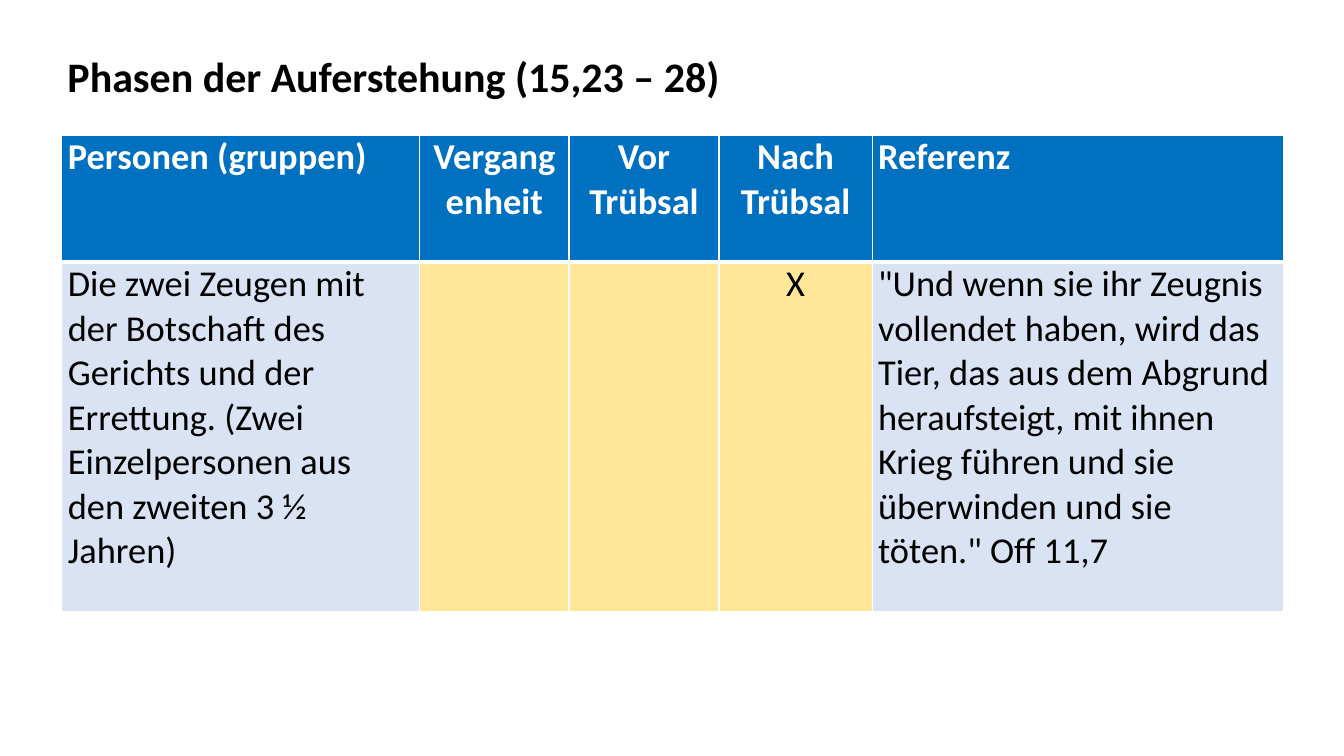
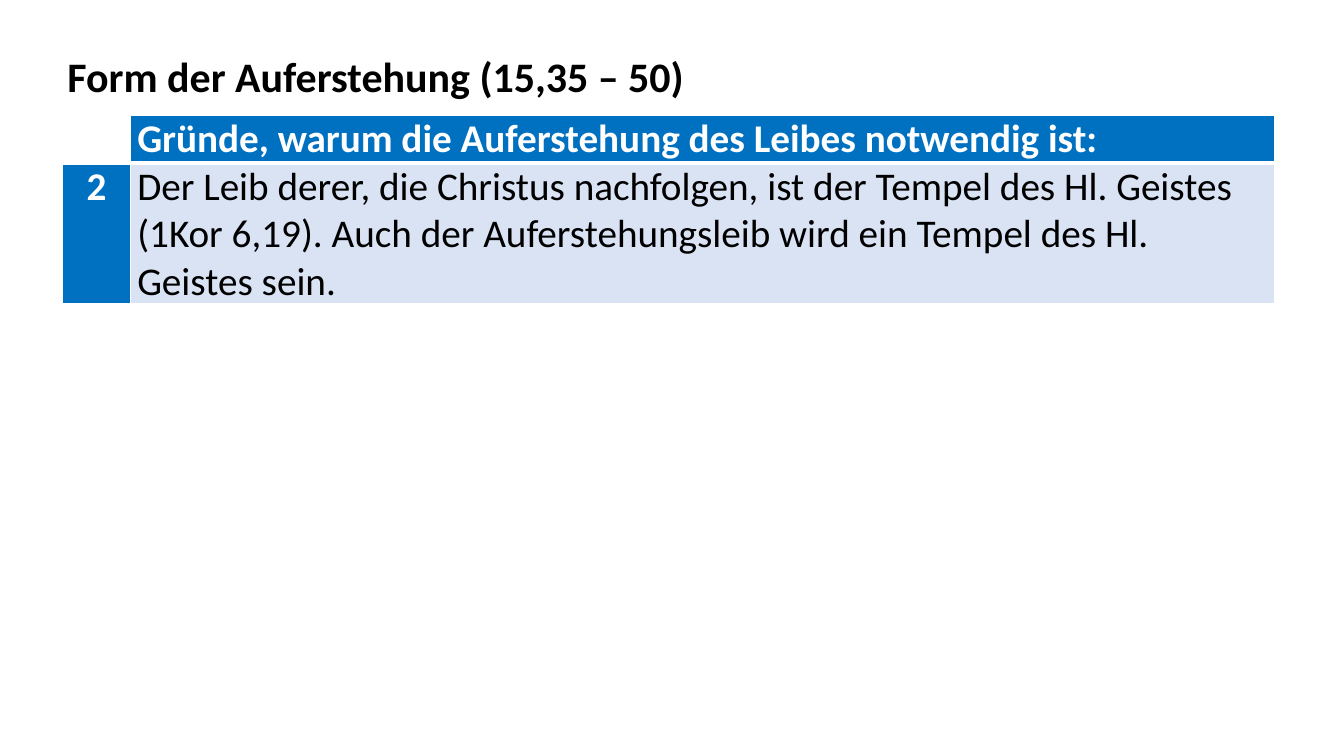
from pptx import Presentation
from pptx.dml.color import RGBColor
from pptx.enum.text import MSO_AUTO_SIZE, PP_ALIGN
from pptx.oxml.ns import qn
from pptx.util import Cm, Pt
from lxml.etree import SubElement

FONT = "Calibri"
BLACK = RGBColor(0x00, 0x00, 0x00)
WHITE = RGBColor(0xFF, 0xFF, 0xFF)
BLUE = RGBColor(0x00, 0x70, 0xC0)
PALE_BLUE = RGBColor(0xDA, 0xE3, 0xF3)
PALE_YELLOW = RGBColor(0xFF, 0xE6, 0x99)

# Content: lengths in centimetres, text sizes in points
SLIDES = [
    {
        "title": "Phasen der Auferstehung (15,23 – 28)",
        "title_width": 17.15,
        "position": (1.56, 3.4),
        "columns": [9.02, 3.76, 3.78, 3.86, 10.36],
        "rows": [3.2, 8.81],
        "size": 26,
        "margin": 0.15,
        "centred": {1, 2, 3},
        "cells": [
            ["Personen (gruppen)", "Vergang\nenheit", "Vor Trübsal", "Nach Trübsal", "Referenz"],
            [
                "Die zwei Zeugen mit der Botschaft des Gerichts und der Errettung. "
                "(Zwei Einzelpersonen aus den zweiten 3 ½ Jahren)",
                "", "", "X",
                '"Und wenn sie ihr Zeugnis vollendet haben, wird das Tier, das aus dem '
                "Abgrund heraufsteigt, mit ihnen Krieg führen und sie überwinden und sie "
                'töten." Off 11,7',
            ],
        ],
        "fills": [
            [BLUE] * 5,
            [PALE_BLUE, PALE_YELLOW, PALE_YELLOW, PALE_YELLOW, PALE_BLUE],
        ],
    },
    {
        "title": "Form der Auferstehung (15,35 – 50)",
        "title_width": 16.23,
        "position": (1.58, 2.9),
        "columns": [1.7, 28.83],
        "rows": [1.2, 3.55],
        "size": 28,
        "margin": 0.18,
        "centred": {0},
        "cells": [
            ["", "Gründe, warum die Auferstehung des Leibes notwendig ist:"],
            [
                "2",
                "Der Leib derer, die Christus nachfolgen, ist der Tempel des Hl. Geistes "
                "(1Kor 6,19). Auch der Auferstehungsleib wird ein Tempel des Hl. Geistes sein.",
            ],
        ],
        "fills": [[WHITE, BLUE], [BLUE, PALE_BLUE]],
    },
]


def style_font(font, size, color, bold):
    font.name = FONT
    font.size = Pt(size)
    font.color.rgb = color
    font.bold = bold


def add_title(slide, text, width):
    box = slide.shapes.add_textbox(Cm(1.45), Cm(1.14), Cm(width), Cm(1.55))
    frame = box.text_frame
    frame.word_wrap = False
    frame.auto_size = MSO_AUTO_SIZE.SHAPE_TO_FIT_TEXT
    frame.text = text
    style_font(frame.paragraphs[0].font, 30, BLACK, True)


def add_borders(cell, is_header):
    """White rules, thicker between the header and the body."""
    properties = cell._tc.get_or_add_tcPr()
    widths = {"a:lnL": 1, "a:lnR": 1, "a:lnT": 1, "a:lnB": 1}
    widths["a:lnB" if is_header else "a:lnT"] = 3
    for tag, width in widths.items():
        line = SubElement(properties, qn(tag), w=str(Pt(width)))
        fill = SubElement(line, qn("a:solidFill"))
        SubElement(fill, qn("a:srgbClr"), val=str(WHITE))


def fill_cell(cell, text, fill, is_header, centred, size, margin):
    add_borders(cell, is_header)
    cell.fill.solid()
    cell.fill.fore_color.rgb = fill
    cell.margin_left = cell.margin_right = Cm(margin)
    cell.margin_top = cell.margin_bottom = 0
    cell.text = text
    on_blue = fill == BLUE
    for paragraph in cell.text_frame.paragraphs:
        paragraph.alignment = PP_ALIGN.CENTER if centred else PP_ALIGN.LEFT
        style_font(paragraph.font, size, WHITE if on_blue else BLACK, on_blue)


def add_table(slide, data):
    columns, rows = data["columns"], data["rows"]
    left, top = data["position"]
    table = slide.shapes.add_table(
        len(rows), len(columns), Cm(left), Cm(top), Cm(sum(columns)), Cm(sum(rows))
    ).table
    for column, width in zip(table.columns, columns):
        column.width = Cm(width)
    for row_index, height in enumerate(rows):
        table.rows[row_index].height = Cm(height)
        for column_index, text in enumerate(data["cells"][row_index]):
            fill_cell(
                table.cell(row_index, column_index), text,
                data["fills"][row_index][column_index], row_index == 0,
                column_index in data["centred"], data["size"], data["margin"],
            )


def main():
    presentation = Presentation()
    presentation.slide_width = Cm(33.87)
    presentation.slide_height = Cm(19.05)
    for data in SLIDES:
        slide = presentation.slides.add_slide(presentation.slide_layouts[6])
        add_title(slide, data["title"], data["title_width"])
        add_table(slide, data)
    presentation.save("out.pptx")


if __name__ == "__main__":
    main()
